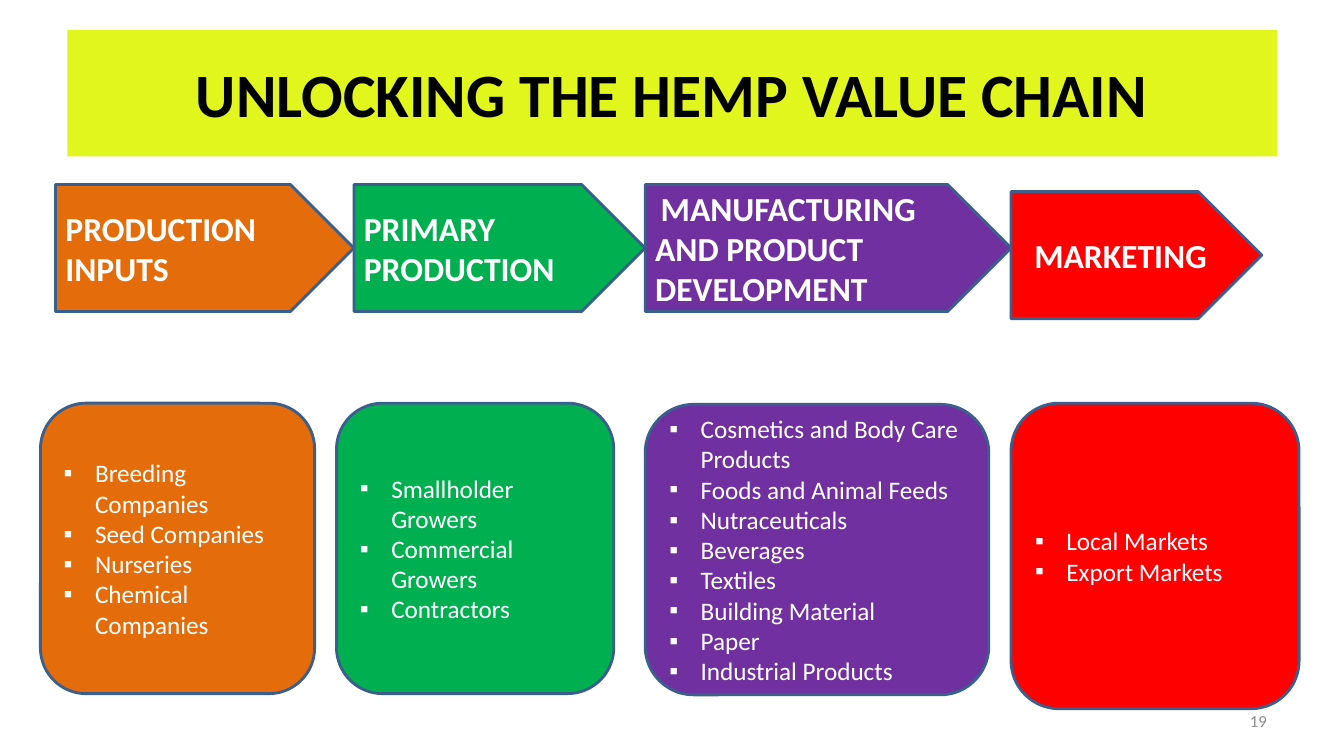
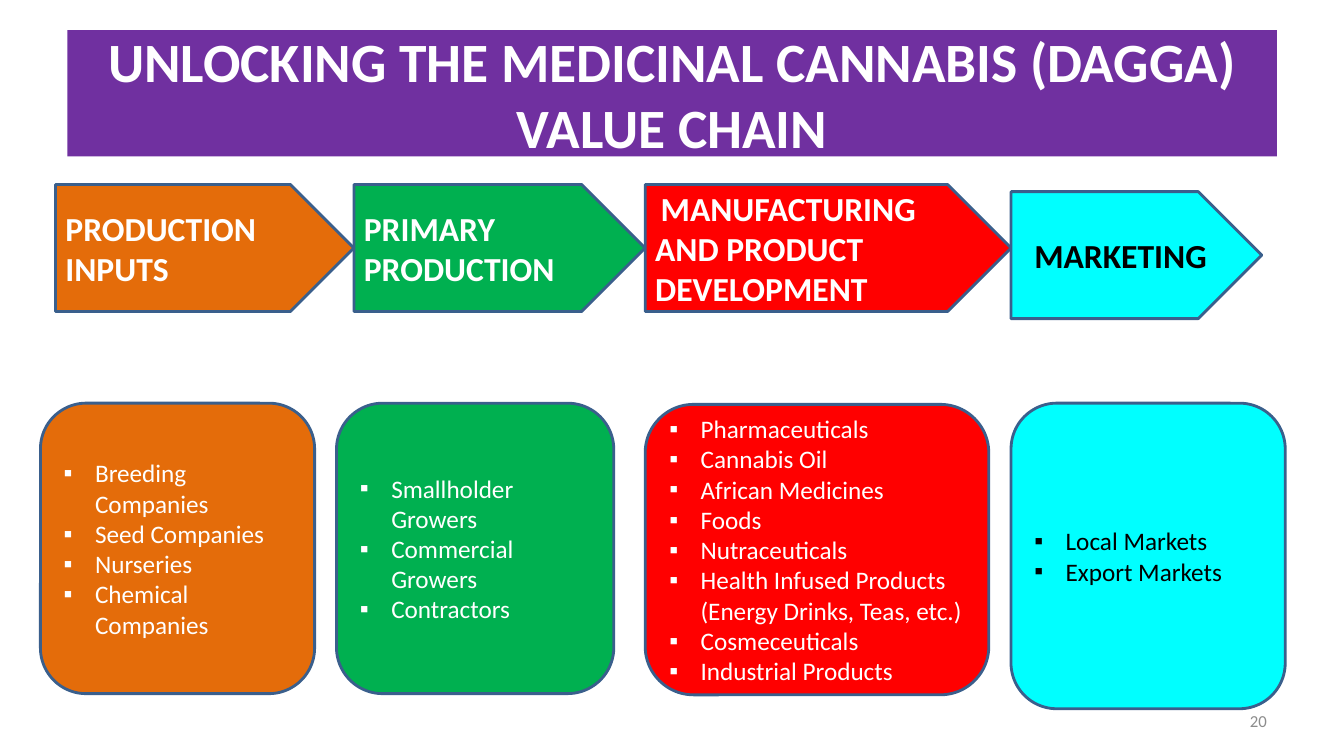
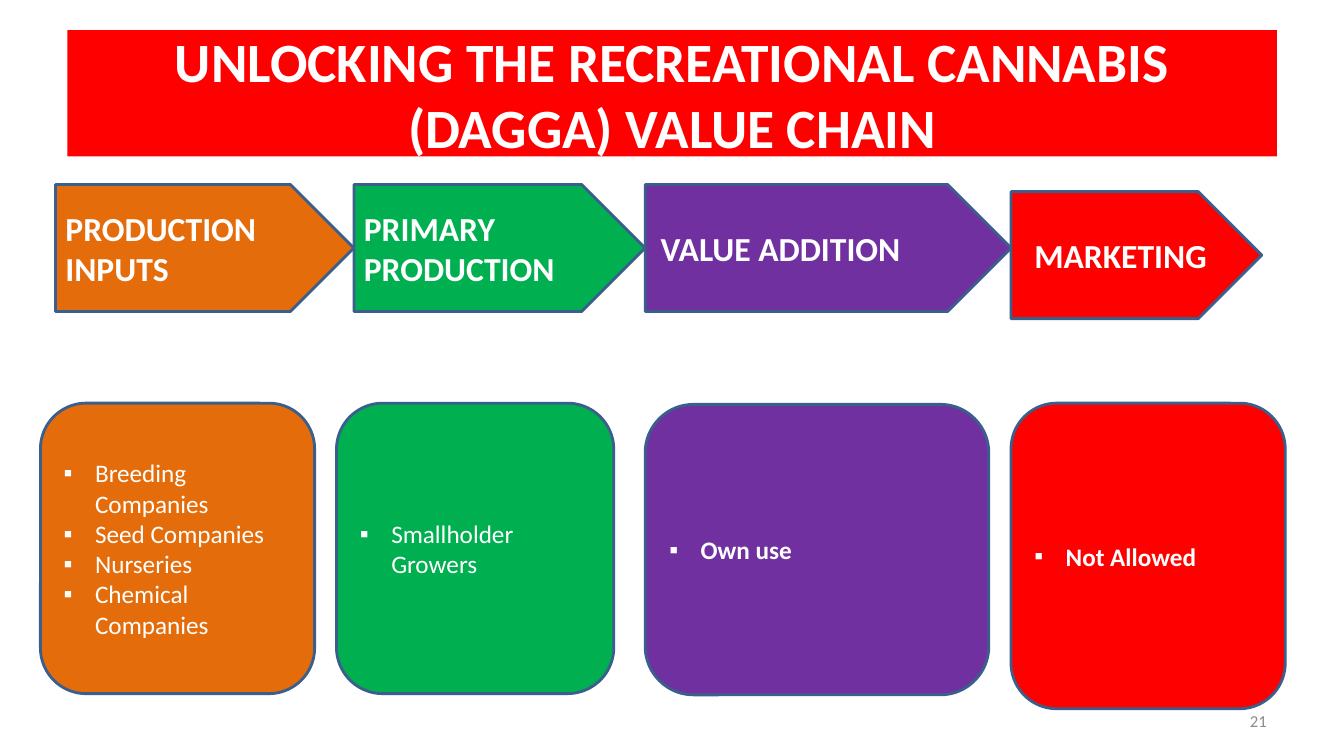
"""Build three value chain slides: a title band, four stage arrows and four list boxes."""
from lxml import etree
from pptx import Presentation
from pptx.dml.color import RGBColor
from pptx.enum import shapes, text
from pptx.oxml.ns import qn
from pptx.util import Cm, Pt

FONT = "Calibri"
WHITE = RGBColor(0xFF, 0xFF, 0xFF)
BLACK = RGBColor(0, 0, 0)
LIME = RGBColor(0xE1, 0xF6, 0x1C)
ORANGE = RGBColor(0xE4, 0x6C, 0x0A)
GREEN = RGBColor(0x00, 0xB0, 0x50)
PURPLE = RGBColor(0x70, 0x30, 0xA0)
RED = RGBColor(0xFF, 0, 0)
CYAN = RGBColor(0, 0xFF, 0xFF)
OUTLINE = RGBColor(0x3A, 0x5F, 0x8C)
GREY = RGBColor(0x8C, 0x8C, 0x8C)
INK = {LIME: BLACK, CYAN: BLACK}

FIRST_NUMBER = 19
LEFT, CENTER, RIGHT = text.PP_ALIGN.LEFT, text.PP_ALIGN.CENTER, text.PP_ALIGN.RIGHT
TITLE_BAND = (1.7, 0.76, 30.48, 3.18)
NUMBER_BOX = (24.28, 17.65, 7.9, 1.02)
ARROWS = [
    (1.4, 4.65, 7.52, 3.2),
    (8.92, 4.65, 7.34, 3.2),
    (16.26, 4.65, 9.22, 3.2),
    (25.48, 4.83, 6.32, 3.2),
]
BOXES = [
    (1.02, 10.16, 6.91, 7.32),
    (8.48, 10.16, 6.99, 7.32),
    (16.26, 10.19, 8.66, 7.32),
    (25.48, 10.16, 6.91, 7.7),
]
WIDE_MARKET_BOX = (25.48, 10.16, 7.26, 7.7)
ARROW_ALIGN = [LEFT, LEFT, LEFT, CENTER]
ARROW_INDENT = [0, 0, 0.14, 0]
BULLET_INDENT = 0.79

INPUTS = ("PRODUCTION INPUTS", ORANGE,
          ["Breeding Companies", "Seed Companies", "Nurseries", "Chemical Companies"])
GROWERS = ["Smallholder Growers", "Commercial Growers", "Contractors"]
PRIMARY = ("PRIMARY PRODUCTION", GREEN, GROWERS)
MANUFACTURING = "MANUFACTURING AND PRODUCT DEVELOPMENT"
MARKETS = ["Local Markets", "Export Markets"]

SLIDES = [
    {"title": "UNLOCKING THE HEMP VALUE CHAIN", "size": 44, "band": LIME,
     "boxes": BOXES[:3] + [WIDE_MARKET_BOX],
     "stages": [
         INPUTS, PRIMARY,
         (MANUFACTURING, PURPLE,
          ["Cosmetics and Body Care Products", "Foods and Animal Feeds", "Nutraceuticals",
           "Beverages", "Textiles", "Building Material", "Paper", "Industrial Products"]),
         ("MARKETING", RED, MARKETS)]},
    {"title": "UNLOCKING THE MEDICINAL CANNABIS (DAGGA) VALUE CHAIN", "size": 39.6,
     "band": PURPLE, "boxes": BOXES,
     "stages": [
         INPUTS, PRIMARY,
         (MANUFACTURING, RED,
          ["Pharmaceuticals", "Cannabis Oil", "African Medicines", "Foods", "Nutraceuticals",
           "Health Infused Products (Energy Drinks, Teas, etc.)", "Cosmeceuticals",
           "Industrial Products"]),
         ("MARKETING", CYAN, MARKETS)]},
    {"title": "UNLOCKING THE RECREATIONAL CANNABIS (DAGGA) VALUE CHAIN", "size": 39.6,
     "band": RED, "boxes": BOXES, "bold_stages": (2, 3),
     "stages": [
         INPUTS, ("PRIMARY PRODUCTION", GREEN, GROWERS[:1]),
         ("VALUE ADDITION", PURPLE, ["Own use"]),
         ("MARKETING", RED, ["Not Allowed"])]},
]


def cm(place):
    return [Cm(v) for v in place]


def fill_shape(sp, color):
    sp.fill.solid()
    sp.fill.fore_color.rgb = color


def write(sp, lines, size, color, bold=False, align=LEFT):
    tf = sp.text_frame
    tf.word_wrap = True
    tf.auto_size = text.MSO_AUTO_SIZE.NONE
    tf.vertical_anchor = text.MSO_ANCHOR.MIDDLE
    for i, line in enumerate(lines):
        p = tf.add_paragraph() if i else tf.paragraphs[0]
        p.alignment = align
        r = p.add_run()
        r.text = line
        r.font.name, r.font.size, r.font.bold = FONT, Pt(size), bold
        r.font.color.rgb = color
    return tf.paragraphs


def indent(p, margin, first):
    pPr = p._p.get_or_add_pPr()
    pPr.set("marL", str(Cm(margin)))
    pPr.set("indent", str(Cm(first)))
    return pPr


def add_bullet(p):
    pPr = indent(p, BULLET_INDENT, -BULLET_INDENT)
    etree.SubElement(pPr, qn("a:buFont")).set("typeface", "Arial")
    etree.SubElement(pPr, qn("a:buChar")).set("char", "▪")


def add_panel(s, kind, place, color):
    sp = s.shapes.add_shape(kind, *cm(place))
    sp.shadow.inherit = False
    fill_shape(sp, color)
    sp.line.color.rgb = OUTLINE
    sp.line.width = Pt(2)
    return sp


def add_stage(s, i, stage, box_place, bold):
    name, color, items = stage
    ink = INK.get(color, WHITE)
    arrow = add_panel(s, shapes.MSO_SHAPE.PENTAGON, ARROWS[i], color)
    for p in write(arrow, [name], 24, ink, True, ARROW_ALIGN[i]):
        indent(p, 0, ARROW_INDENT[i])
    box = add_panel(s, shapes.MSO_SHAPE.ROUNDED_RECTANGLE, box_place, color)
    for p in write(box, items, 18, ink, bold):
        add_bullet(p)


def add_slide(prs, layout, number, data):
    s = prs.slides.add_slide(layout)
    title = s.shapes.title
    fill_shape(title, data["band"])
    write(title, [data["title"]], data["size"], INK.get(data["band"], WHITE), True, CENTER)
    write(s.shapes.add_textbox(*cm(NUMBER_BOX)), [str(number)], 12, GREY, align=RIGHT)
    for i, (stage, place) in enumerate(zip(data["stages"], data["boxes"])):
        add_stage(s, i, stage, place, i in data.get("bold_stages", ()))


def main():
    prs = Presentation()
    prs.slide_width, prs.slide_height = Cm(33.87), Cm(19.05)
    layout = prs.slide_layouts[5]
    band = layout.placeholders[0]
    band.left, band.top, band.width, band.height = cm(TITLE_BAND)
    for number, data in enumerate(SLIDES, FIRST_NUMBER):
        add_slide(prs, layout, number, data)
    prs.save("out.pptx")


if __name__ == "__main__":
    main()
